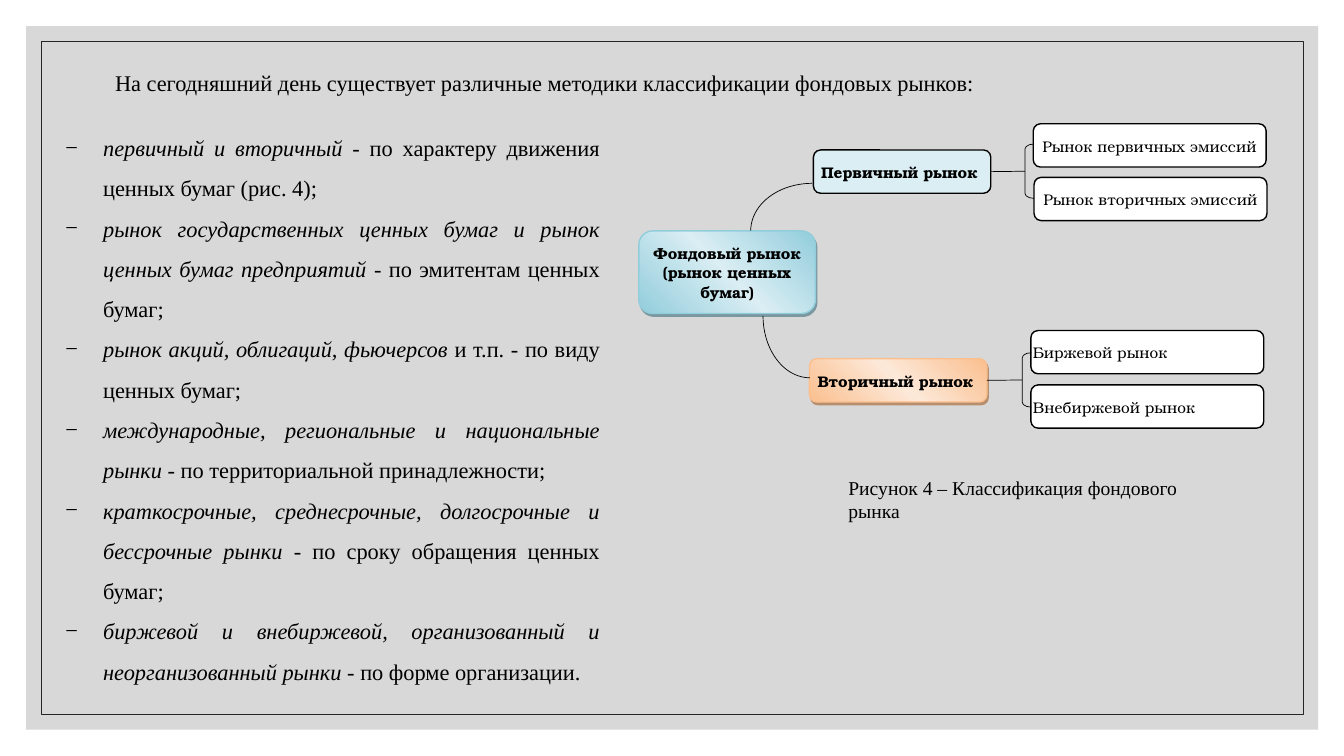
from dataclasses import dataclass
from typing import Optional

from lxml.etree import SubElement
from pptx import Presentation
from pptx.dml.color import RGBColor
from pptx.enum.shapes import MSO_CONNECTOR, MSO_SHAPE
from pptx.enum.text import MSO_ANCHOR, MSO_AUTO_SIZE, PP_ALIGN
from pptx.oxml.ns import qn
from pptx.util import Cm, Pt

BLACK = RGBColor(0x00, 0x00, 0x00)
WHITE = RGBColor(0xFF, 0xFF, 0xFF)
GREY = RGBColor(0xBF, 0xBF, 0xBF)
CHARCOAL = RGBColor(0x26, 0x26, 0x26)
BLUE = RGBColor(0x92, 0xCD, 0xDC)
PALE_BLUE = RGBColor(0xDA, 0xEE, 0xF3)
DEEP_BLUE = RGBColor(0x20, 0x58, 0x67)
ORANGE = RGBColor(0xFA, 0xBF, 0x8F)
PALE_ORANGE = RGBColor(0xFD, 0xE9, 0xD9)
DEEP_BROWN = RGBColor(0x97, 0x47, 0x06)
SERIF = "Times New Roman"
BOOK = "TeX Gyre Bonum"


@dataclass(frozen=True)
class Area:
    left: float
    top: float
    width: float
    height: float

    def lengths(self) -> tuple:
        return Cm(self.left), Cm(self.top), Cm(self.width), Cm(self.height)


@dataclass(frozen=True)
class Span:
    text: str
    italic: bool = False


@dataclass(frozen=True)
class Box:
    text: str
    area: Area
    fill: RGBColor = WHITE
    line: RGBColor = BLACK
    glow: Optional[RGBColor] = None
    shade: Optional[RGBColor] = None
    bold: bool = False
    align: PP_ALIGN = PP_ALIGN.CENTER


@dataclass(frozen=True)
class Branch:
    parent: Box
    bracket: Area
    children: tuple


MARKET = Box("Фондовый рынок (рынок ценных бумаг)", Area(16.1, 5.82, 4.45, 2.08),
             BLUE, BLUE, PALE_BLUE, DEEP_BLUE, True)
BRANCHES = (
    Branch(Box("Первичный рынок ", Area(20.5, 3.78, 4.47, 1.09), PALE_BLUE, bold=True),
           Area(25.83, 3.63, 0.23, 1.37),
           (Box("Рынок первичных эмиссий", Area(26.04, 3.12, 5.87, 1.09)),
            Box("Рынок вторичных эмиссий", Area(26.06, 4.47, 5.87, 1.09)))),
    Branch(Box("Вторичный рынок ", Area(20.4, 9.04, 4.47, 1.09),
               ORANGE, ORANGE, PALE_ORANGE, DEEP_BROWN, True),
           Area(25.76, 8.89, 0.23, 1.37),
           (Box("Биржевой рынок", Area(25.98, 8.33, 5.87, 1.09), align=PP_ALIGN.LEFT),
            Box("Внебиржевой рынок", Area(25.98, 9.7, 5.87, 1.09), align=PP_ALIGN.LEFT))),
)
ARCS = ((Area(18.92, 4.62, 3.1, 2.39), 108, 162),
        (Area(19.23, 6.4, 2.36, 3.12), 54, 108))
METHODS = (
    ("первичный и вторичный", " - по характеру движения ценных бумаг (рис. 4);"),
    ("рынок государственных ценных бумаг и рынок ценных бумаг предприятий",
     " - по эмитентам ценных бумаг;"),
    ("рынок акций, облигаций, фьючерсов", " и т.п. - по виду ценных бумаг;"),
    ("международные, региональные и национальные рынки",
     " - по территориальной принадлежности;"),
    ("краткосрочные, среднесрочные, долгосрочные и бессрочные рынки",
     " - по сроку обращения ценных бумаг;"),
    ("биржевой и внебиржевой, организованный и неорганизованный рынки",
     " - по форме организации."),
)


def write(frame, paragraphs, *, font: str = SERIF, size: float = 16, bold: bool = False,
          align: PP_ALIGN = PP_ALIGN.LEFT, spacing: float = 1.0, after: float = 0,
          margin: float = 0, indent: float = 0, bullet: str = "") -> None:
    frame.word_wrap = True
    for index, spans in enumerate(paragraphs):
        para = frame.add_paragraph() if index else frame.paragraphs[0]
        para.alignment = align
        para.line_spacing = spacing
        para.space_after = Pt(after)
        props = para._p.get_or_add_pPr()
        props.set("marL", str(Cm(margin)))
        props.set("indent", str(Cm(indent)))
        if bullet:
            SubElement(props, qn("a:buFont"), typeface=SERIF)
            SubElement(props, qn("a:buChar"), char=bullet)
        for span in spans:
            run = para.add_run()
            run.text = span.text
            run.font.name = font
            run.font.size = Pt(size)
            run.font.bold = bold
            run.font.italic = span.italic
            run.font.color.rgb = BLACK


def add_text(page, area: Area, paragraphs, **style) -> None:
    frame = page.shapes.add_textbox(*area.lengths()).text_frame
    frame.auto_size = MSO_AUTO_SIZE.SHAPE_TO_FIT_TEXT
    write(frame, paragraphs, **style)


def add_figure(page, kind: MSO_SHAPE, area: Area, *, fill: Optional[RGBColor] = None,
               line: Optional[RGBColor] = None, weight: float = 0.5):
    shape = page.shapes.add_shape(kind, *area.lengths())
    shape.shadow.inherit = False
    if fill is None:
        shape.fill.background()
    else:
        shape.fill.solid()
        shape.fill.fore_color.rgb = fill
    if line is None:
        shape.line.fill.background()
    else:
        shape.line.color.rgb = line
        shape.line.width = Pt(weight)
    return shape


def add_color(parent, color: RGBColor, alpha: int = 100) -> None:
    node = SubElement(parent, qn("a:srgbClr"), val=str(color))
    if alpha < 100:
        SubElement(node, qn("a:alpha"), val=str(alpha * 1000))


def add_gradient(shape, edge: RGBColor, center: RGBColor) -> None:
    shape.fill.gradient()
    gradient = shape._element.spPr.find(qn("a:gradFill"))
    for child in list(gradient):
        gradient.remove(child)
    stops = SubElement(gradient, qn("a:gsLst"))
    for position, color in ((0, edge), (50, center), (100, edge)):
        add_color(SubElement(stops, qn("a:gs"), pos=str(position * 1000)), color)
    SubElement(gradient, qn("a:lin"), ang=str(315 * 60000), scaled="1")


def add_shade(shape, color: RGBColor) -> None:
    effects = shape._element.spPr.find(qn("a:effectLst"))
    shade = SubElement(effects, qn("a:outerShdw"), dist=str(Pt(2.2)),
                       dir=str(63 * 60000), algn="ctr", rotWithShape="0")
    add_color(shade, color, 50)


def add_box(page, box: Box):
    shape = add_figure(page, MSO_SHAPE.ROUNDED_RECTANGLE, box.area,
                       fill=box.fill, line=box.line, weight=1)
    if box.glow:
        add_gradient(shape, box.fill, box.glow)
    if box.shade:
        add_shade(shape, box.shade)
    frame = shape.text_frame
    frame.margin_left = frame.margin_right = frame.margin_top = frame.margin_bottom = 0
    frame.vertical_anchor = MSO_ANCHOR.MIDDLE
    write(frame, [[Span(box.text)]], font=BOOK, size=11, bold=box.bold,
          align=box.align, spacing=1.07, after=8)
    return shape


def add_branch(page, branch: Branch) -> None:
    parent = add_box(page, branch.parent)
    for child in branch.children:
        add_box(page, child)
    bracket = add_figure(page, MSO_SHAPE.LEFT_BRACKET, branch.bracket, line=BLACK)
    bracket.adjustments[0] = 0.56
    link = page.shapes.add_connector(MSO_CONNECTOR.STRAIGHT, 0, 0, 0, 0)
    link.begin_connect(parent, 3)
    link.end_connect(bracket, 1)
    link.line.color.rgb = BLACK
    link.line.width = Pt(0.5)
    SubElement(link._element.spPr, qn("a:effectLst"))


def main() -> None:
    deck = Presentation()
    deck.slide_width, deck.slide_height = Cm(33.87), Cm(19.05)
    page = deck.slides.add_slide(deck.slide_layouts[6])
    backdrop = add_figure(page, MSO_SHAPE.RECTANGLE, Area(0.66, 0.66, 32.56, 17.73), fill=GREY)
    color = backdrop._element.spPr.find(qn("a:solidFill"))[0]
    SubElement(color, qn("a:alpha"), val="60000")
    add_figure(page, MSO_SHAPE.RECTANGLE, Area(1.04, 1.04, 31.8, 16.97), line=CHARCOAL)

    add_text(page, Area(1.4, 1.27, 24.61, 1.19), [[Span(
        "На сегодняшний день существует различные методики классификации фондовых рынков:")]],
        spacing=1.5, indent=1.25)
    add_text(page, Area(1.4, 2.92, 13.97, 14.7),
             [[Span(name, True), Span(basis)] for name, basis in METHODS],
             align=PP_ALIGN.JUSTIFY, spacing=1.5, margin=0.95, indent=-0.95, bullet="−")

    add_box(page, MARKET)
    for branch in BRANCHES:
        add_branch(page, branch)
    for area, start, end in ARCS:
        arc = add_figure(page, MSO_SHAPE.ARC, area, line=BLACK)
        arc.adjustments[0], arc.adjustments[1] = start, end
    add_text(page, Area(21.13, 11.86, 9.9, 1.47),
             [[Span("Рисунок 4 – Классификация фондового рынка")]], size=14)
    deck.save("out.pptx")


if __name__ == "__main__":
    main()
